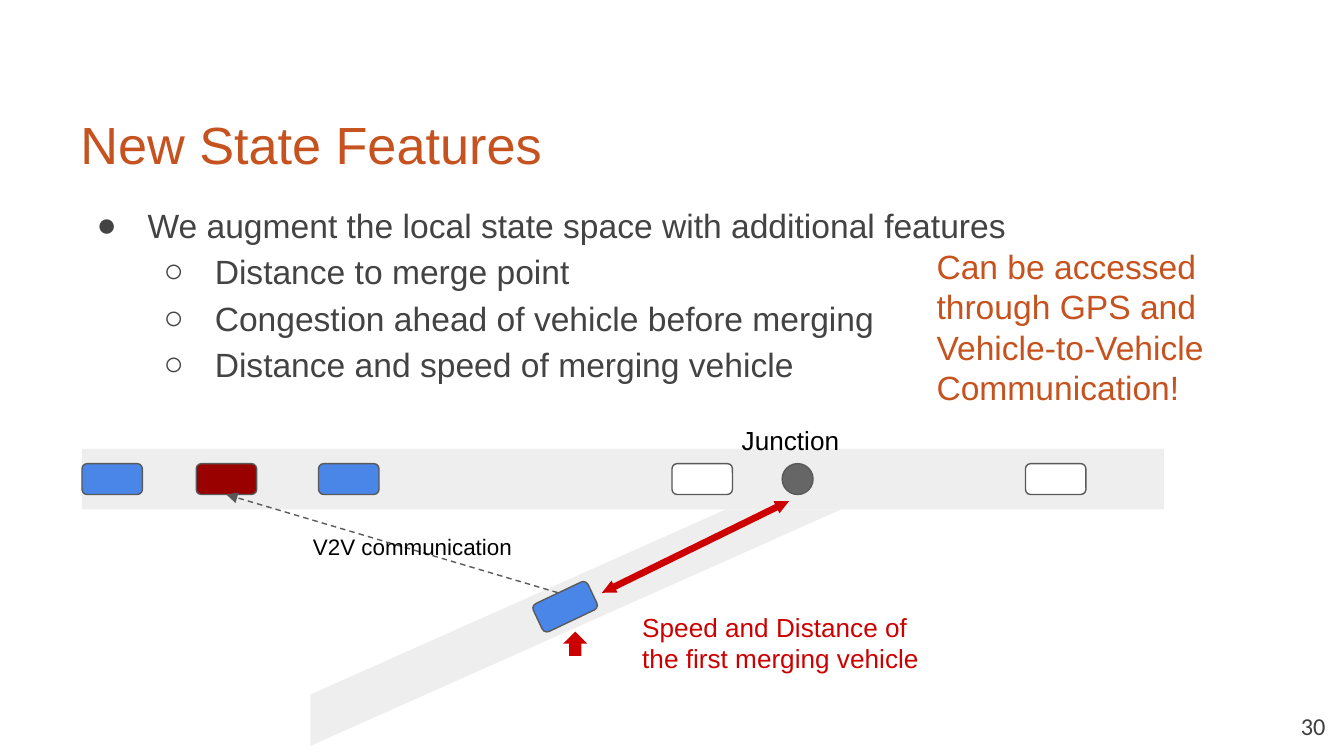
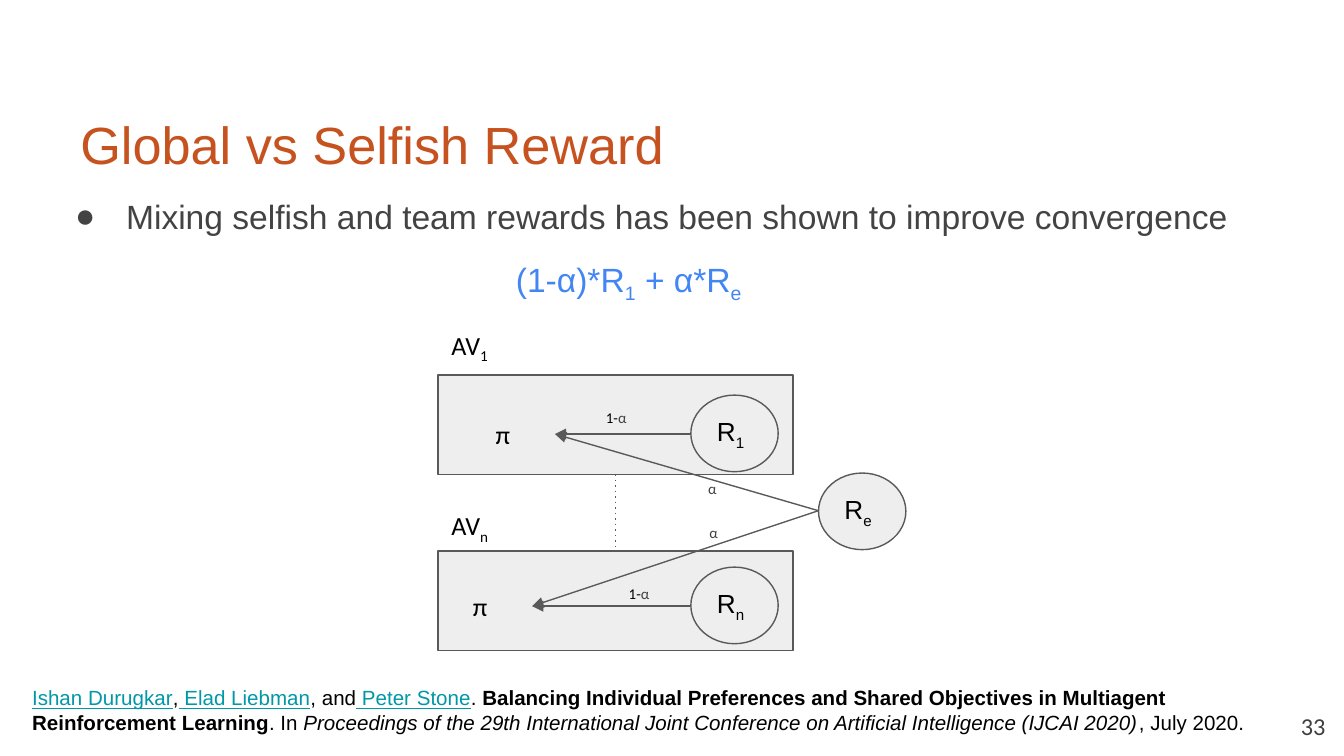
from lxml import etree
from pptx import Presentation
from pptx.dml.color import RGBColor
from pptx.enum.shapes import MSO_CONNECTOR, MSO_SHAPE
from pptx.enum.text import MSO_ANCHOR, MSO_AUTO_SIZE, PP_ALIGN
from pptx.oxml.ns import qn
from pptx.util import Inches, Pt

RECT, ROUNDED, OVAL = MSO_SHAPE.RECTANGLE, MSO_SHAPE.ROUNDED_RECTANGLE, MSO_SHAPE.OVAL
STRIPE, UP_ARROW, TWO_WAY = MSO_SHAPE.DIAGONAL_STRIPE, MSO_SHAPE.UP_ARROW, MSO_SHAPE.LEFT_RIGHT_ARROW
STRAIGHT = MSO_CONNECTOR.STRAIGHT
LEFT, RIGHT = PP_ALIGN.LEFT, PP_ALIGN.RIGHT
TOP, MIDDLE = MSO_ANCHOR.TOP, MSO_ANCHOR.MIDDLE
FIT = MSO_AUTO_SIZE.SHAPE_TO_FIT_TEXT
SIDE_TOP, SIDE_BOTTOM, SIDE_RIGHT = 0, 2, 3

COLORS = {
    "accent": "C6531F", "body": "434343", "number": "3F3F3F", "black": "000000",
    "panel": "EEEEEE", "outline": "595959", "dot": "666666", "white": "FFFFFF",
    "blue": "4A86E8", "formula": "4285F4", "red": "CC0000", "dark_red": "990000",
    "link": "0097A7",
}
PAGE_WIDTH = Inches(10)
PAGE_HEIGHT = PAGE_WIDTH * 9 // 16
CAR_SIZE = (0.45, 0.23)
CIRCLE_SIZE = (0.65, 0.57)
SUB = {"sub": True}
LINK = {"color": "link", "underline": True}


def rgb(name):
    return RGBColor.from_string(COLORS[name])


# Text
def add_spans(para, spans, size, color="black", font="Arial"):
    """Fill a paragraph from a string or from (text, style) pairs."""
    if isinstance(spans, str):
        spans = [(spans, {})]
    for text, style in spans:
        span = para.add_run()
        span.text = text
        span.font.name = font
        span.font.size = Pt(size)
        span.font.color.rgb = rgb(style.get("color", color))
        for key in ("bold", "italic", "underline"):
            if key in style:
                setattr(span.font, key, style[key])
        if style.get("sub"):
            span.font._element.set("baseline", "-25000")


def set_frame(frame, anchor=TOP, inset=0.1):
    frame.word_wrap = True
    frame.vertical_anchor = anchor
    frame.margin_left = frame.margin_right = Inches(0.1)
    frame.margin_top = frame.margin_bottom = Inches(inset)


def add_frame(page, at, **options):
    box = page.shapes.add_textbox(*map(Inches, at))
    set_frame(box.text_frame, **options)
    return box


def add_label(page, at, spans, size, color="black", font="Arial"):
    box = add_frame(page, at)
    box.text_frame.auto_size = FIT
    add_spans(box.text_frame.paragraphs[0], spans, size, color, font)
    return box


def add_bullet(para, text, level=0, line_spacing=None):
    add_spans(para, text, 18, "body")
    para.level = level
    para.space_before = Pt(0 if level else 3.6)
    if line_spacing:
        para.line_spacing = line_spacing
    props = para._p.get_or_add_pPr()
    props.set("marL", str(Inches(0.5 * (level + 1))))
    props.set("indent", str(Inches(-0.38)))
    tint = etree.SubElement(props, qn("a:buClr"))
    etree.SubElement(tint, qn("a:srgbClr"), val=COLORS["body"])
    etree.SubElement(props, qn("a:buFont"), typeface="Arial")
    etree.SubElement(props, qn("a:buChar"), char="○" if level else "●")


# Shapes and lines
def add_block(page, kind, at, fill, outlined=False, rotation=0, adjust=()):
    block = page.shapes.add_shape(kind, *map(Inches, at))
    block.shadow.inherit = False
    block.rotation = rotation
    block.fill.solid()
    block.fill.fore_color.rgb = rgb(fill)
    if outlined:
        block.line.color.rgb = rgb("outline")
        block.line.width = Pt(0.75)
    else:
        block.line.fill.background()
    for index, value in enumerate(adjust):
        block.adjustments[index] = value
    return block


def add_car(page, left, top, fill, rotation=0):
    return add_block(page, ROUNDED, (left, top, *CAR_SIZE), fill, True, rotation)


def add_reward(page, left, top, index):
    circle = add_block(page, OVAL, (left, top, *CIRCLE_SIZE), "panel", True)
    set_frame(circle.text_frame, anchor=MIDDLE)
    para = circle.text_frame.paragraphs[0]
    para.alignment = LEFT
    add_spans(para, [("R", {}), (index, SUB)], 14)


def add_link(page, start, end, dash=None, arrow=True):
    """Each end is a point or a (shape, side) pair."""
    line = page.shapes.add_connector(STRAIGHT, 0, 0, 0, 0)
    if isinstance(start[0], (int, float)):
        line.begin_x, line.begin_y = map(Inches, start)
    else:
        line.begin_connect(*start)
    line.end_connect(*end)
    line.line.color.rgb = rgb("outline")
    line.line.width = Pt(0.75)
    stroke = line.line._get_or_add_ln()
    if dash:
        etree.SubElement(stroke, qn("a:prstDash"), val=dash)
    if arrow:
        etree.SubElement(stroke, qn("a:tailEnd"), type="triangle")
    etree.SubElement(line._element.spPr, qn("a:effectLst"))


# Parts shared by both slides
def add_page(deck, title, number):
    page = deck.slides.add_slide(deck.slide_layouts[6])
    page.background.fill.solid()
    page.background.fill.fore_color.rgb = rgb("white")
    box = add_frame(page, (0.5, 0.6, 9, 0.94), anchor=MIDDLE, inset=0.05)
    add_spans(box.text_frame.paragraphs[0], title, 28, "accent")
    box = add_frame(page, (9.36, 5.19, 0.6, 0.43))
    para = box.text_frame.paragraphs[0]
    para.alignment = RIGHT
    add_spans(para, number, 13, "number", "Calibri")
    return page


def build_features(deck):
    page = add_page(deck, "New State Features", "30")
    frame = add_frame(page, (0.5, 1.43, 9.13, 3.69), inset=0.05).text_frame
    add_bullet(frame.paragraphs[0], "We augment the local state space with additional features",
               line_spacing=1.15)
    for text in ("Distance to merge point",
                 "Congestion ahead of vehicle before merging",
                 "Distance and speed of merging vehicle"):
        add_bullet(frame.add_paragraph(), text, 1, 1.15)

    # Road and ramp
    add_block(page, RECT, (0.61, 3.34, 8.05, 0.45), "panel")
    add_block(page, STRIPE, (2.31, 3.79, 3.95, 1.76), "panel", adjust=[0.783])

    # Cars, junction and arrows
    ego_car = add_car(page, 1.46, 3.45, "dark_red")
    for left, fill in ((2.37, "blue"), (0.61, "blue")):
        add_car(page, left, 3.45, fill)
    add_car(page, 3.98, 4.4, "blue", 334.6)
    for left in (5, 7.63):
        add_car(page, left, 3.45, "white")
    add_block(page, OVAL, (5.82, 3.45, 0.23, 0.23), "dot", True)
    add_block(page, UP_ARROW, (4.19, 4.7, 0.18, 0.18), "red")
    add_block(page, TWO_WAY, (4.4, 4.02, 1.55, 0.1), "red", rotation=333.9, adjust=[0.5, 1.036])
    add_link(page, (4.15, 4.41), (ego_car, SIDE_BOTTOM), "dash")

    # Labels
    add_label(page, (4.68, 4.45, 2.31, 0.67),
              "Speed and Distance of the first merging vehicle", 14, "red")
    add_label(page, (5.42, 3.06, 1.02, 0.44), "Junction", 14)
    add_label(page, (6.87, 1.73, 2.22, 1.41),
              "Can be accessed through GPS and Vehicle-to-Vehicle Communication!", 18, "accent")
    add_label(page, (2.23, 3.87, 2.22, 0.4), "V2V communication", 12)


def build_rewards(deck):
    page = add_page(deck, "Global vs Selfish Reward", "33")
    frame = add_frame(page, (0.34, 1.41, 9.33, 0.94), inset=0.05).text_frame
    add_bullet(frame.paragraphs[0],
               "Mixing selfish and team rewards has been shown to improve convergence")
    formula = frame.add_paragraph()
    formula.space_before = formula.space_after = Pt(12)
    formula._p.get_or_add_pPr().set("marL", str(Inches(3.4)))
    add_spans(formula, [("(1-α)*R", {}), ("1", SUB), (" + α*R", {}), ("e", SUB)], 18, "formula")

    # Citation
    add_label(page, (0.14, 5, 9.71, 0.57), [
        ("Ishan Durugkar", LINK), (",", {}), (" Elad Liebman", LINK), (", and", {}),
        (" Peter Stone", LINK), (". ", {}),
        ("Balancing Individual Preferences and Shared Objectives in Multiagent "
         "Reinforcement Learning", {"bold": True}),
        (". In ", {}),
        ("Proceedings of the 29th International Joint Conference on Artificial "
         "Intelligence (IJCAI 2020)", {"italic": True}),
        (", July 2020.", {})], 11)

    # One panel per vehicle, joined by a dotted line
    panels = [add_block(page, RECT, (3.26, top, 2.64, 0.74), "panel", True)
              for top in (2.79, 4.1)]
    add_link(page, (panels[0], SIDE_BOTTOM), (panels[1], SIDE_TOP), "dot", arrow=False)

    # Policies and rewards
    add_reward(page, 6.09, 3.52, "e")
    for index, name_top, policy_at, reward_top, weight_at, team_at in (
            ("1", 2.35, (3.59, 3.01), 2.94, (4.41, 2.97), (5.17, 3.5)),
            ("n", 3.69, (3.42, 4.29), 4.22, (4.58, 4.28), (5.18, 3.83))):
        add_label(page, (3.26, name_top, 1.01, 0.44), [("AV", {}), (index, SUB)],
                  14, font="Calibri")
        policy = add_label(page, (*policy_at, 0.54, 0.44), "π", 14, font="Calibri")
        add_reward(page, 5.14, reward_top, index)
        for start in ((6.09, 3.8), (5.14, policy_at[1] + 0.22)):
            add_link(page, start, (policy, SIDE_RIGHT))
        add_label(page, (*weight_at, 0.6, 0.34), [("1-", {}), ("α", {"color": "number"})],
                  8, font="Calibri")
        add_label(page, (*team_at, 0.6, 0.34), "α", 8, "number", "Calibri")


def main():
    deck = Presentation()
    deck.slide_width, deck.slide_height = PAGE_WIDTH, PAGE_HEIGHT
    build_features(deck)
    build_rewards(deck)
    deck.save("out.pptx")


if __name__ == "__main__":
    main()
